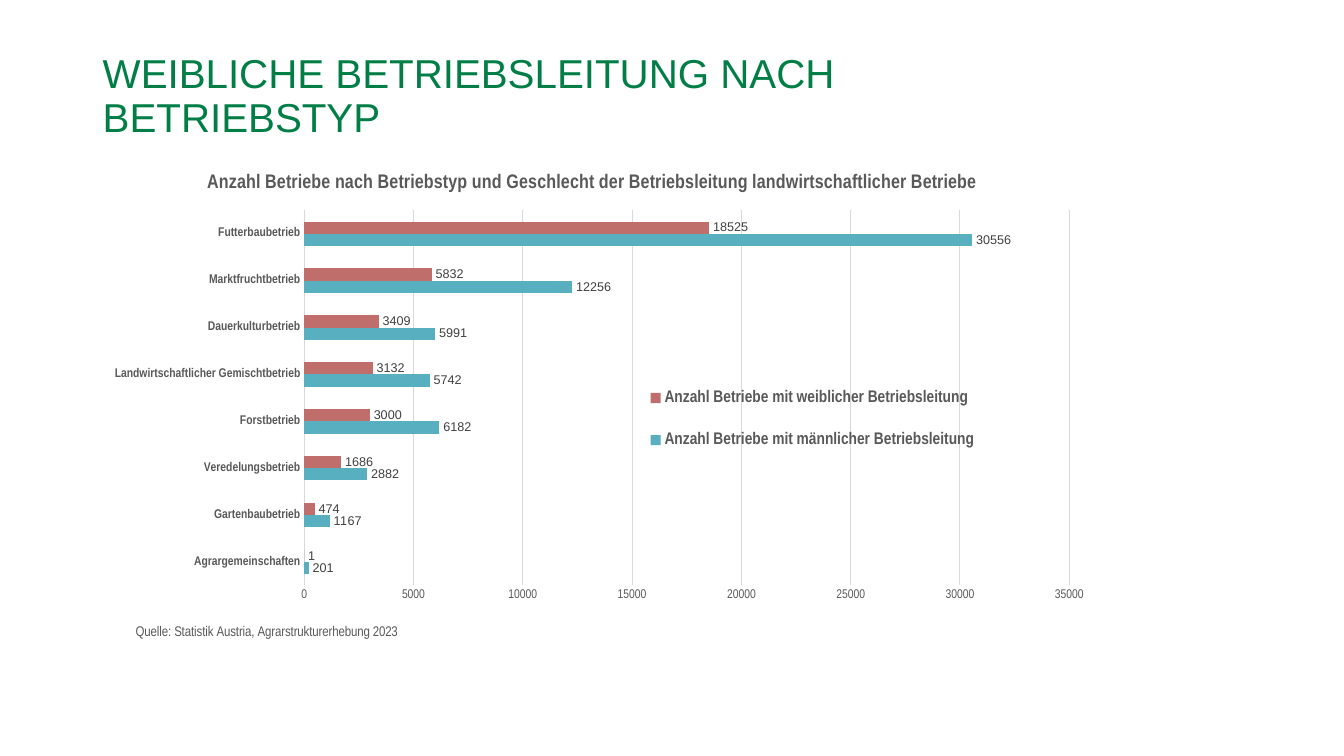
from dataclasses import dataclass

import pptx
import pptx.chart.data
import pptx.dml.color
import pptx.enum.chart
import pptx.enum.text
import pptx.oxml
import pptx.oxml.ns
import pptx.util
from pptx.util import Cm


@dataclass(frozen=True)
class Theme:
    heading_font: str = "Arial"
    chart_font: str = "Arial Narrow"
    green: str = "007E46"
    grey: str = "595959"
    label_grey: str = "404040"
    grid_grey: str = "D9D9D9"
    male: str = "58AFC0"
    female: str = "C06E6C"
    heading_size: float = 28.8
    chart_title_size: float = 14
    legend_size: float = 12
    source_size: float = 10
    axis_size: float = 9
    line_width: float = 0.75


THEME = Theme()

FARMS = [  # farm type, male managers, female managers
    ("Agrargemeinschaften", 201, 1),
    ("Gartenbaubetrieb", 1167, 474),
    ("Veredelungsbetrieb", 2882, 1686),
    ("Forstbetrieb", 6182, 3000),
    ("Landwirtschaftlicher Gemischtbetrieb", 5742, 3132),
    ("Dauerkulturbetrieb", 5991, 3409),
    ("Marktfruchtbetrieb", 12256, 5832),
    ("Futterbaubetrieb", 30556, 18525),
]


def rgb(color):
    return pptx.dml.color.RGBColor.from_string(color)


def style_font(font, size, color=THEME.grey, name=THEME.chart_font, bold=False):
    font.size = pptx.util.Pt(size)
    font.color.rgb = rgb(color)
    font.name = name
    font.bold = bold


def put_text(frame, text, line_spacing=None, **font_format):
    paragraph = frame.paragraphs[0]
    if line_spacing:
        paragraph.line_spacing = line_spacing
    run = paragraph.add_run()
    run.text = text
    style_font(run.font, **font_format)


def style_line(line):
    line.color.rgb = rgb(THEME.grid_grey)
    line.width = pptx.util.Pt(THEME.line_width)


def place(element, index, inner=False, **fractions):
    """Give a chart part a manual layout, in fractions of the chart, as child number index."""
    for old in element.findall(pptx.oxml.ns.qn("c:layout")):
        element.remove(old)
    settings = {"layoutTarget": "inner"} if inner else {}
    settings |= {"xMode": "edge", "yMode": "edge"} | fractions
    children = "".join(f'<c:{tag} val="{value}"/>' for tag, value in settings.items())
    layout = pptx.oxml.parse_xml(
        f'<c:layout {pptx.oxml.ns.nsdecls("c")}>'
        f"<c:manualLayout>{children}</c:manualLayout></c:layout>"
    )
    element.insert(index, layout)


def add_heading(slide, text):
    box = slide.shapes.add_textbox(Cm(2.34), Cm(1.83), Cm(25.37), Cm(1.24))
    frame = box.text_frame
    frame.word_wrap = True
    frame.vertical_anchor = pptx.enum.text.MSO_ANCHOR.MIDDLE
    put_text(frame, text, line_spacing=0.9, size=THEME.heading_size,
             color=THEME.green, name=THEME.heading_font)


def add_farm_chart(slide):
    types, male, female = zip(*FARMS)
    data = pptx.chart.data.CategoryChartData(number_format="0")
    data.categories = types
    data.add_series("Anzahl Betriebe mit männlicher Betriebsleitung", male)
    data.add_series("Anzahl Betriebe mit weiblicher Betriebsleitung", female)
    chart = slide.shapes.add_chart(
        pptx.enum.chart.XL_CHART_TYPE.BAR_CLUSTERED,
        Cm(2.34), Cm(3.84), Cm(25.37), Cm(13.31), data,
    ).chart
    chart.font.name = THEME.heading_font
    chart.font.size = pptx.util.Pt(THEME.source_size)
    return chart


def style_bars(plot):
    plot.gap_width = 182
    plot.overlap = 0
    plot.vary_by_categories = False
    for series, color in zip(plot.series, (THEME.male, THEME.female)):
        series.format.fill.solid()
        series.format.fill.fore_color.rgb = rgb(color)
        labels = series.data_labels
        labels.show_value = True
        labels.number_format = "0"
        labels.number_format_is_linked = False
        labels.position = pptx.enum.chart.XL_LABEL_POSITION.OUTSIDE_END
        style_font(labels.font, THEME.axis_size, THEME.label_grey, THEME.heading_font)


def style_axes(chart):
    farm_types, counts = chart.category_axis, chart.value_axis
    for axis in (farm_types, counts):
        axis.major_tick_mark = pptx.enum.chart.XL_TICK_MARK.NONE
        axis.minor_tick_mark = pptx.enum.chart.XL_TICK_MARK.NONE
        style_font(axis.tick_labels.font, THEME.axis_size, bold=axis is farm_types)
    style_line(farm_types.format.line)
    counts.format.line.fill.background()
    counts.minimum_scale, counts.maximum_scale, counts.major_unit = 0, 35000, 5000
    counts.tick_labels.number_format = "0"
    counts.tick_labels.number_format_is_linked = False
    style_line(counts.major_gridlines.format.line)


def add_chart_titles(chart):
    title = chart.chart_title
    put_text(title.text_frame,
             "Anzahl Betriebe nach Betriebstyp und Geschlecht der Betriebsleitung "
             "landwirtschaftlicher Betriebe",
             size=THEME.chart_title_size, bold=True)
    place(title._element, 1, x=0.11, y=0.03)

    source = chart.value_axis.axis_title
    put_text(source.text_frame, "Quelle: Statistik Austria, Agrarstrukturerhebung 2023",
             size=THEME.source_size)
    source.text_frame._txBody.bodyPr.set("rot", "0")
    place(source._element, 1, x=0.04, y=0.89)


def add_legend(chart):
    chart.has_legend = True
    legend = chart.legend
    legend.position = pptx.enum.chart.XL_LEGEND_POSITION.BOTTOM
    legend.include_in_layout = False
    style_font(legend.font, THEME.legend_size, bold=True)
    place(legend._element, 1, x=0.54, y=0.4, w=0.35, h=0.21)


def main():
    deck = pptx.Presentation()
    deck.slide_width, deck.slide_height = Cm(33.87), Cm(19.05)
    slide = deck.slides.add_slide(deck.slide_layouts[6])
    add_heading(slide, "WEIBLICHE BETRIEBSLEITUNG NACH BETRIEBSTYP")
    chart = add_farm_chart(slide)
    style_bars(chart.plots[0])
    style_axes(chart)
    add_chart_titles(chart)
    add_legend(chart)
    plot_area = chart._chartSpace.chart.plotArea
    place(plot_area, 0, inner=True, x=0.21, y=0.11, w=0.76, h=0.71)
    deck.save("out.pptx")


if __name__ == "__main__":
    main()
